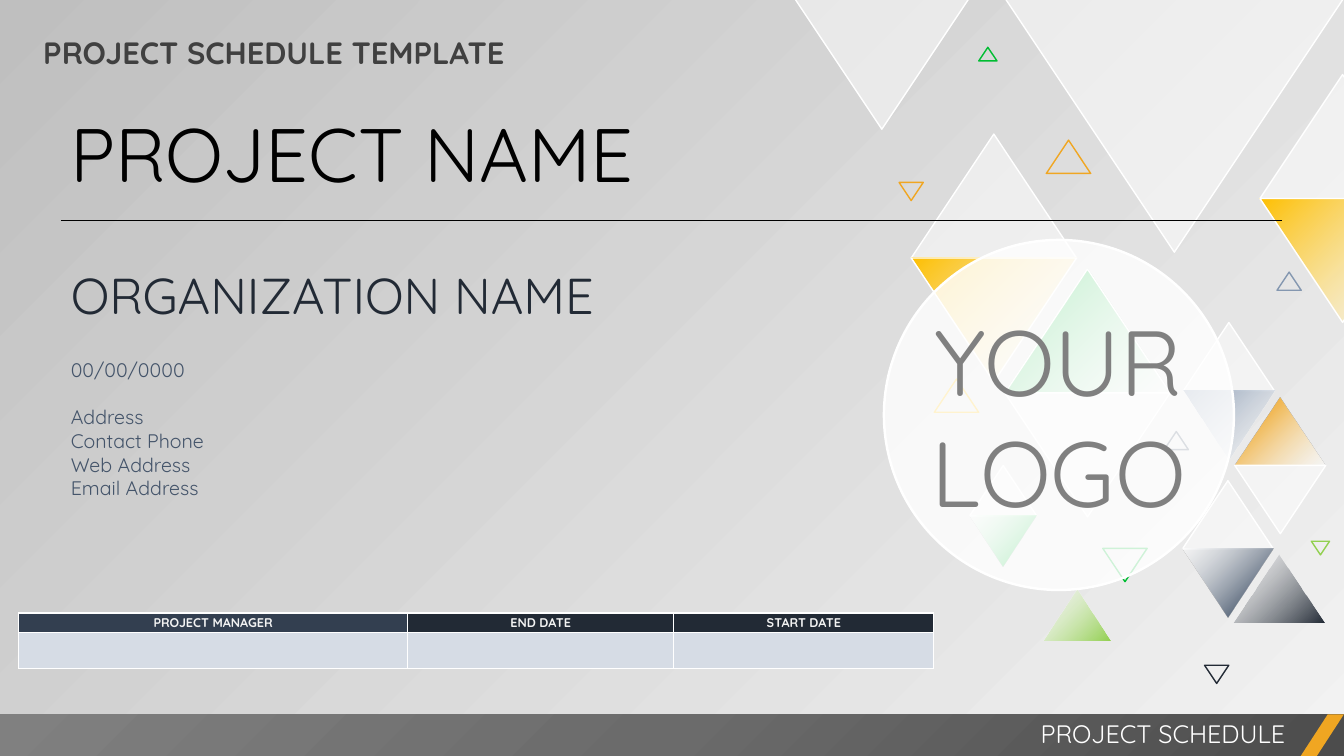
from lxml import etree
from pptx import Presentation
from pptx.dml.color import RGBColor
from pptx.enum.shapes import MSO_CONNECTOR, MSO_SHAPE
from pptx.enum.text import MSO_ANCHOR as ANCHOR, MSO_AUTO_SIZE as AUTO, PP_ALIGN as ALIGN
from pptx.oxml.ns import qn
from pptx.util import Pt

FONT = "Quicksand"
C = dict(white="FFFFFF", black="000000", yellow="FFC000", orange="F0A622", green="00BD32",
         lime="92D050", slate="44546A", steel="8497B0", dark="222A35", navy="333F50",
         ice="D6DCE5", pale="F2F2F2", silver="BFBFBF", gray="808080", title="404040",
         bar_dark="4C4C4C", bar_mid="6B6B6B")

# Stacked pairs: left, top, width, fill of the upper half, fill of the lower half.
# A fill is a colour and the end of the gradient where it sits; None leaves a half out.
PLAIN = ("white", "solid")
PAIRS = [
    (90.9, 95.8, 118, PLAIN, ("yellow", "start")),
    (157.8, 192.2, 118, ("green", "end"), PLAIN),
    (157.8, -182.9, 242, None, PLAIN),
    (321.3, 396, 65, ("dark", "start"), None),
    (284.6, 343.4, 65, PLAIN, ("slate", "end")),
    (285.3, 230.4, 65, PLAIN, ("steel", "start")),
    (322, 283.7, 65, ("orange", "end"), PLAIN),
    (185.2, 421.2, 48, ("lime", "start"), None),
    (132.6, 332.6, 48, PLAIN, ("green", "end")),
    (340, 53.3, 118, PLAIN, ("yellow", "start")),
    (7.4, -95.2, 125, None, PLAIN),
]
# Outlines: left, top, width, points down, colour.
OUTLINES = [
    (227.7, 391.7, 31.7, True, "green"), (107.4, 270.7, 31.7, False, "yellow"),
    (271.6, 308.2, 17.3, False, "slate"), (300.4, 475.2, 17.3, True, "dark"),
    (82.2, 130.3, 17.3, True, "orange"), (352.2, 194.4, 17.3, False, "steel"),
    (139.1, 33.8, 13, False, "green"), (376.7, 386.6, 13, True, "lime"),
    (187.4, 100.1, 31.7, False, "orange"),
]


def rgb(name):
    return RGBColor.from_string(C[name])


def pts(*values):
    return [Pt(v) for v in values]


def add_alpha(color, alpha):
    etree.SubElement(color, qn("a:alpha"), val=str(alpha * 1000))


def set_gradient(fill, owner, stops, angle=225, corner=False):
    """Stops are (position, colour, opacity); corner centres rings at the bottom right."""
    fill.gradient()
    grad = owner.find(".//" + qn("a:gradFill"))
    for child in list(grad):
        grad.remove(child)
    grad.set("rotWithShape", "1")
    stop_list = etree.SubElement(grad, qn("a:gsLst"))
    for pos, name, alpha in stops:
        gs = etree.SubElement(stop_list, qn("a:gs"), pos=str(pos * 1000))
        color = etree.SubElement(gs, qn("a:srgbClr"), val=C[name])
        if alpha < 100:
            add_alpha(color, alpha)
    if corner:
        ring = etree.SubElement(grad, qn("a:path"), path="circle")
        etree.SubElement(ring, qn("a:fillToRect"), l="100000", t="100000")
    else:
        etree.SubElement(grad, qn("a:lin"), ang=str(angle * 60000), scaled="0")


def set_solid(sp, name, alpha=100):
    sp.fill.solid()
    sp.fill.fore_color.rgb = rgb(name)
    if alpha < 100:
        add_alpha(sp._element.spPr.find(".//" + qn("a:srgbClr")), alpha)


def add_preset(shapes, kind, box, line=None, width=1):
    sp = shapes.add_shape(kind, *pts(*box))
    sp.shadow.inherit = False
    if line:
        sp.line.color.rgb = rgb(line)
        sp.line.width = Pt(width)
    else:
        sp.line.fill.background()
    return sp


def add_run(p, text, size, color, bold=False):
    r = p.add_run()
    r.text = text
    r.font.name, r.font.size, r.font.bold = FONT, Pt(size), bold
    r.font.color.rgb = rgb(color)


def add_text(s, box, lines, align=ALIGN.LEFT, bold=False):
    """Lines are (text, size, colour, space before)."""
    tf = s.shapes.add_textbox(*pts(*box)).text_frame
    tf.word_wrap = True
    tf.auto_size = AUTO.SHAPE_TO_FIT_TEXT
    for i, (text, size, color, gap) in enumerate(lines):
        p = tf.add_paragraph() if i else tf.paragraphs[0]
        p.alignment = align
        p.space_before = Pt(gap)
        add_run(p, text, size, color, bold)


def add_triangle(shapes, x, y, w, down, line):
    sp = add_preset(shapes, MSO_SHAPE.ISOSCELES_TRIANGLE, (x, y, w, 0.75 * w), line)
    sp.rotation = 180 if down else 0
    return sp


def triangle_pattern(s, left, top):
    shapes = s.shapes.add_group_shape().shapes
    for x, y, w, *halves in PAIRS:
        for down, half in enumerate(halves):
            if half is None:
                continue
            color, side = half
            line = "white" if side == "solid" or w > 100 else None
            sp = add_triangle(shapes, left + x, top + y + down * 0.75 * w, w, down, line)
            if side == "solid":
                set_solid(sp, color, 50)
            elif side == "start":
                set_gradient(sp.fill, sp._element, [(0, color, 100), (100, "white", 50)])
            else:
                set_gradient(sp.fill, sp._element, [(0, "white", 50), (82, color, 100)])
    for x, y, w, down, color in OUTLINES:
        add_triangle(shapes, left + x, top + y, w, down, color).fill.background()


def footer(s, left, top, width, height):
    bar = add_preset(s.shapes, MSO_SHAPE.RECTANGLE, (left, top, width, height))
    set_gradient(bar.fill, bar._element, corner=True, stops=[
        (0, "bar_dark", 100), (50, "bar_mid", 100), (100, "gray", 100)])
    slash = add_preset(s.shapes, MSO_SHAPE.PARALLELOGRAM, (left + width - 31, top, 31, height))
    slash.adjustments[0] = 0.65
    set_solid(slash, "orange")
    add_text(s, (left + width - 582, top - 0.7, 547.2, 29),
             [("PROJECT SCHEDULE", 18, "white", 0)], ALIGN.RIGHT)


def headings(s, left, top, width):
    add_text(s, (left, top, width, 72.7), [("PROJECT NAME", 54, "black", 0)])
    contact = ["Contact Phone", "Web Address", "Email Address"]
    add_text(s, (left, top + 112.3, 640.8, 177), [
        ("ORGANIZATION NAME", 36, "dark", 0), ("00/00/0000", 14, "slate", 24),
        ("Address", 14, "slate", 17)] + [(text, 14, "slate", 0) for text in contact])
    rule = s.shapes.add_connector(MSO_CONNECTOR.STRAIGHT,
                                  *pts(left, top + 84.5, left + 872, top + 84.5))
    rule.line.color.rgb = rgb("black")
    rule.line.width = Pt(0.5)
    etree.SubElement(rule._element.spPr, qn("a:effectLst"))


def logo_disc(s, left, top, size):
    disc = add_preset(s.shapes, MSO_SHAPE.OVAL, (left, top, size, size), "white", 1.75)
    set_solid(disc, "white", 81)
    tf = disc.text_frame
    tf.word_wrap = False
    tf.vertical_anchor = ANCHOR.MIDDLE
    tf.margin_left = tf.margin_top = tf.margin_right = tf.margin_bottom = 0
    for p, word in zip((tf.paragraphs[0], tf.add_paragraph()), ("YOUR", "LOGO")):
        p.alignment = ALIGN.CENTER
        add_run(p, word, 66, "gray")


def set_borders(cell, color):
    tc_pr = cell._tc.get_or_add_tcPr()
    for i, side in enumerate(("lnL", "lnR", "lnT", "lnB")):
        ln = etree.Element(qn("a:" + side), w=str(Pt(1)))
        fill = etree.SubElement(ln, qn("a:solidFill"))
        etree.SubElement(fill, qn("a:srgbClr"), val=C[color])
        tc_pr.insert(i, ln)


def schedule_table(s, left, top, col_widths, row_heights):
    heads = [("PROJECT MANAGER", "navy"), ("END DATE", "dark"), ("START DATE", "dark")]
    table = s.shapes.add_table(2, len(heads), *pts(
        left, top, sum(col_widths), sum(row_heights))).table
    for row, height in zip(table.rows, row_heights):
        row.height = Pt(height)
    for i, (text, color) in enumerate(heads):
        table.columns[i].width = Pt(col_widths[i])
        for j, fill in enumerate((color, "ice")):
            cell = table.cell(j, i)
            set_solid_cell = cell.fill
            set_solid_cell.solid()
            set_solid_cell.fore_color.rgb = rgb(fill)
            set_borders(cell, "white")
            cell.vertical_anchor = ANCHOR.MIDDLE
            cell.margin_left = cell.margin_right = cell.margin_top = Pt(0.7)
            cell.margin_bottom = 0
        p = table.cell(0, i).text_frame.paragraphs[0]
        p.alignment = ALIGN.CENTER
        add_run(p, text, 9, "pale", True)


def main():
    prs = Presentation()
    prs.slide_width, prs.slide_height = Pt(960), Pt(540)
    s = prs.slides.add_slide(prs.slide_layouts[6])
    set_gradient(s.background.fill, s._element, [(0, "pale", 40), (100, "silver", 100)])
    triangle_pattern(s, 560, 0)
    add_text(s, (23.8, 20.2, 620, 33.8), [("PROJECT SCHEDULE TEMPLATE", 22, "title", 0)], bold=True)
    footer(s, 0, 510.2, 960, 30)
    headings(s, 43.5, 72.7, 883.4)
    logo_disc(s, 631.4, 171.4, 250)
    schedule_table(s, 13.3, 437.8, (277.9, 190.1, 185.8), (13.7, 25.9))
    prs.save("out.pptx")


if __name__ == "__main__":
    main()
